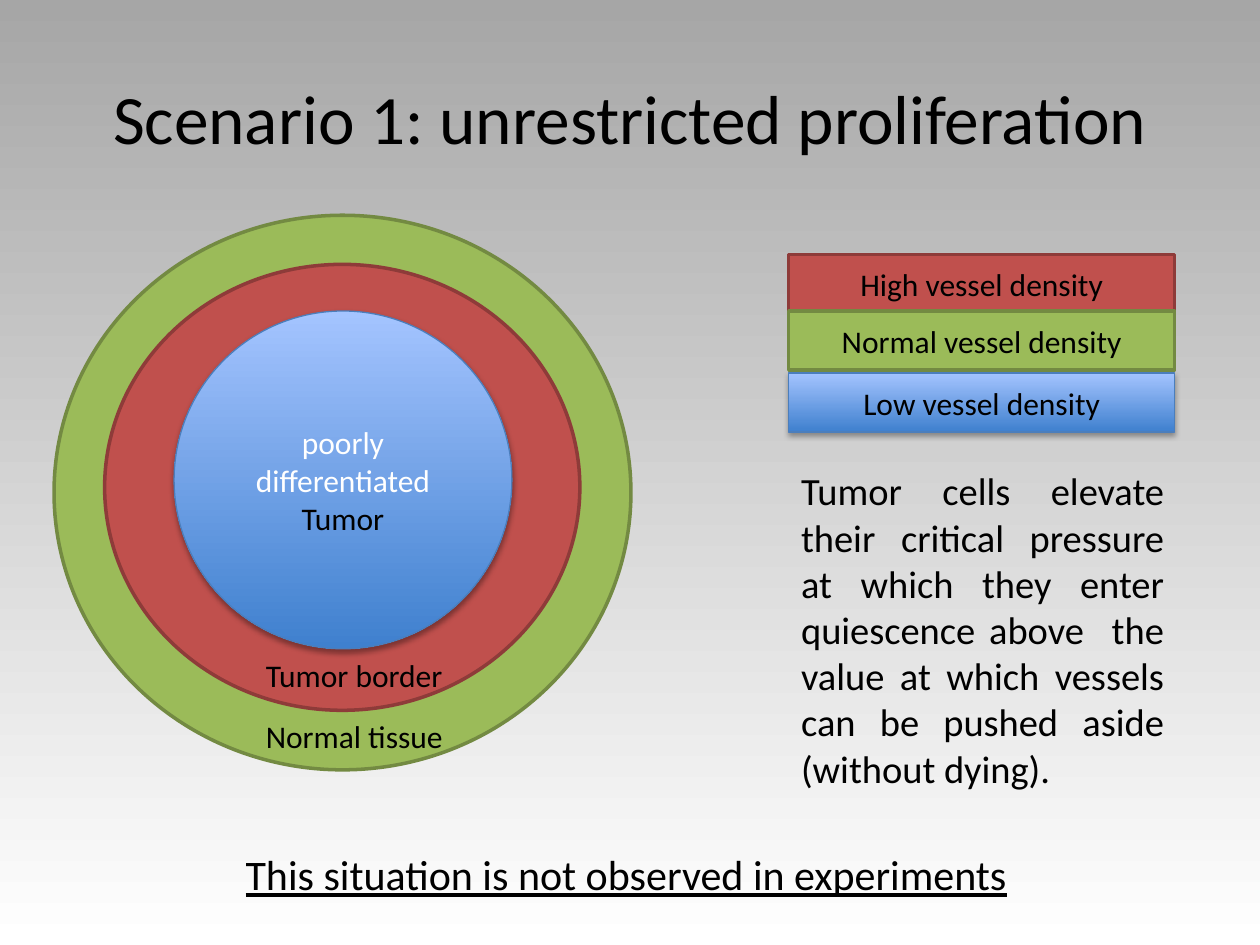
from pptx import Presentation
from pptx.dml.color import RGBColor
from pptx.enum.shapes import MSO_SHAPE as Shape
from pptx.enum.text import MSO_ANCHOR as Anchor, MSO_AUTO_SIZE as Auto, PP_ALIGN as Align
from pptx.util import Cm, Pt

rgb = RGBColor.from_string


def shade(fill, top, bottom):
    """Fill with a gradient that runs straight down."""
    fill.gradient()
    fill.gradient_angle = 270
    for stop, tone in zip(fill.gradient_stops, (top, bottom)):
        stop.color.rgb = rgb(tone)


def write(shape, parts, size, align=Align.LEFT):
    """Put (text, colour) runs into the first paragraph of a shape."""
    para = shape.text_frame.paragraphs[0]
    para.alignment = align
    for text, tone in parts:
        run = para.add_run()
        run.text = text
        run.font.name = "Calibri"
        run.font.size = Pt(size)
        run.font.color.rgb = rgb(tone)


BLACK, WHITE = "000000", "FFFFFF"
# density: fill, line colour, line width; low density has a gradient
LOOKS = {
    "High": ("C0504D", "8E3B39", 2),
    "Normal": ("9BBB59", "738A42", 2),
    "Low": (None, "4B7EBC", 0.75),
}

prs = Presentation()
prs.slide_width, prs.slide_height = Cm(25.4), Cm(19.05)
slide = prs.slides.add_slide(prs.slide_layouts[5])
shade(slide.background.fill, "A6A6A6", WHITE)

title = slide.shapes.title
title.left, title.top, title.width, title.height = Cm(1.27), Cm(0.76), Cm(22.86), Cm(3.18)
title.text_frame.vertical_anchor = Anchor.MIDDLE
write(title, [("Scenario 1: unrestricted proliferation", BLACK)], 39.6, Align.CENTER)

# Tissue rings from the outside in, then the legend bars
tumor = [("poorly differentiated ", WHITE), ("Tumor", BLACK)]
rings = [
    ("Normal", 1.09, 4.34, 11.63, 11.18, []),
    ("High", 2.11, 5.33, 9.58, 8.99, []),
    ("Low", 3.51, 6.27, 6.81, 6.81, tumor),
]
bars = [
    (level, 15.9, top, 7.78, 1.19, [(f"{level} vessel density", BLACK)])
    for level, top in (("High", 5.13), ("Low", 7.52), ("Normal", 6.27))
]
legend = None
for kind, items in ((Shape.OVAL, rings), (Shape.RECTANGLE, bars)):
    home = slide.shapes if kind == Shape.OVAL else slide.shapes.add_group_shape().shapes
    for level, left, top, width, height, parts in items:
        shape = home.add_shape(kind, Cm(left), Cm(top), Cm(width), Cm(height))
        fill, line, weight = LOOKS[level]
        if fill:
            shape.fill.solid()
            shape.fill.fore_color.rgb = rgb(fill)
            shape.shadow.inherit = False
        else:
            # Low density keeps the soft shadow of the theme
            shade(shape.fill, "A4C4FF", "3F80CE")
        shape.line.color.rgb = rgb(line)
        shape.line.width = Pt(weight)
        shape.text_frame.vertical_anchor = Anchor.MIDDLE
        write(shape, parts, 18, Align.CENTER)

claim = (
    "Tumor cells elevate their critical pressure at which they enter quiescence "
    "above  the value at which vessels can be pushed aside (without dying). "
)
notes = [
    ("Normal tissue", 5.11, 14.33, 4.19, 1.02, 18, Align.LEFT),
    ("Tumor border", 5.11, 13.11, 4.19, 1.02, 18, Align.LEFT),
    (claim, 15.9, 9.3, 7.82, 6.83, 22, Align.JUSTIFY),
    ("This situation is not observed in experiments", 4.7, 16.99, 16.05, 1.27, 24, Align.LEFT),
]
for text, left, top, width, height, size, align in notes:
    box = slide.shapes.add_textbox(Cm(left), Cm(top), Cm(width), Cm(height))
    box.text_frame.word_wrap = True
    box.text_frame.auto_size = Auto.SHAPE_TO_FIT_TEXT
    write(box, [(text, BLACK)], size, align)

# The closing verdict is underlined and stays on one line
box.text_frame.word_wrap = False
box.text_frame.paragraphs[0].runs[0].font.underline = True

prs.save("out.pptx")
